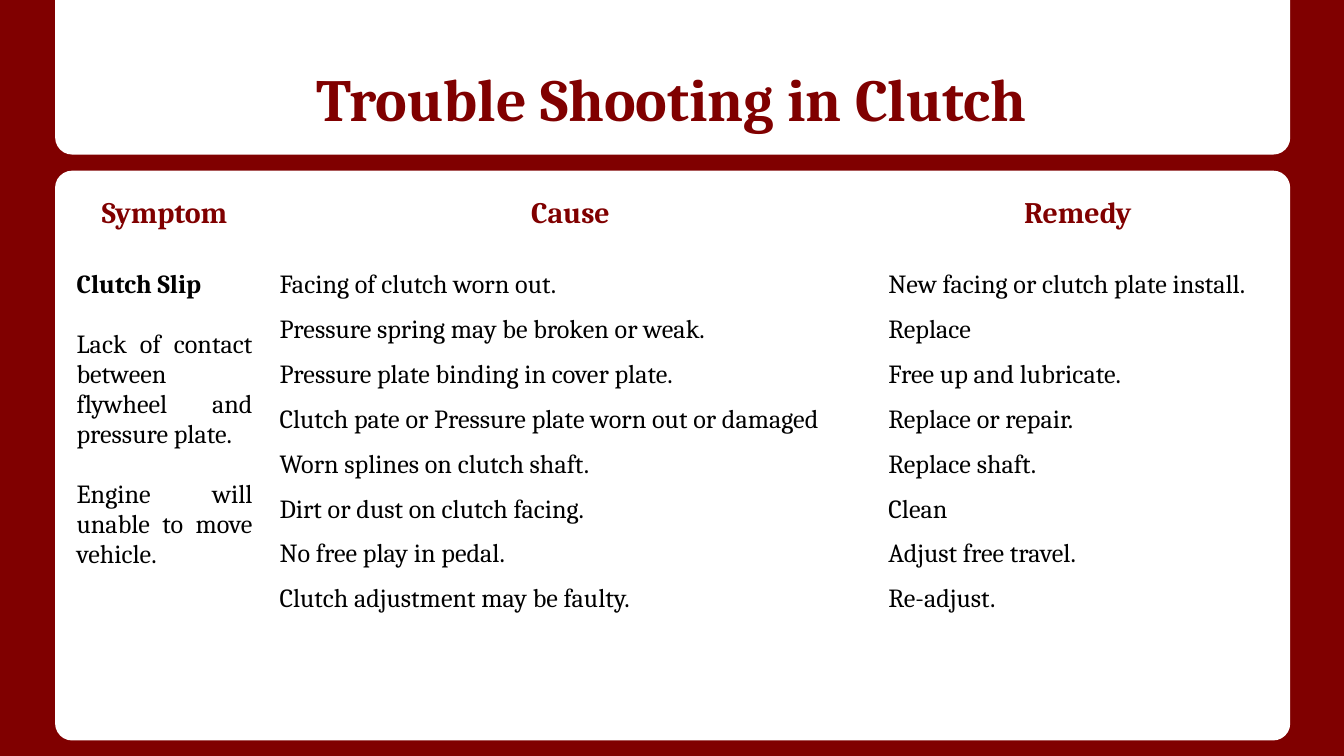
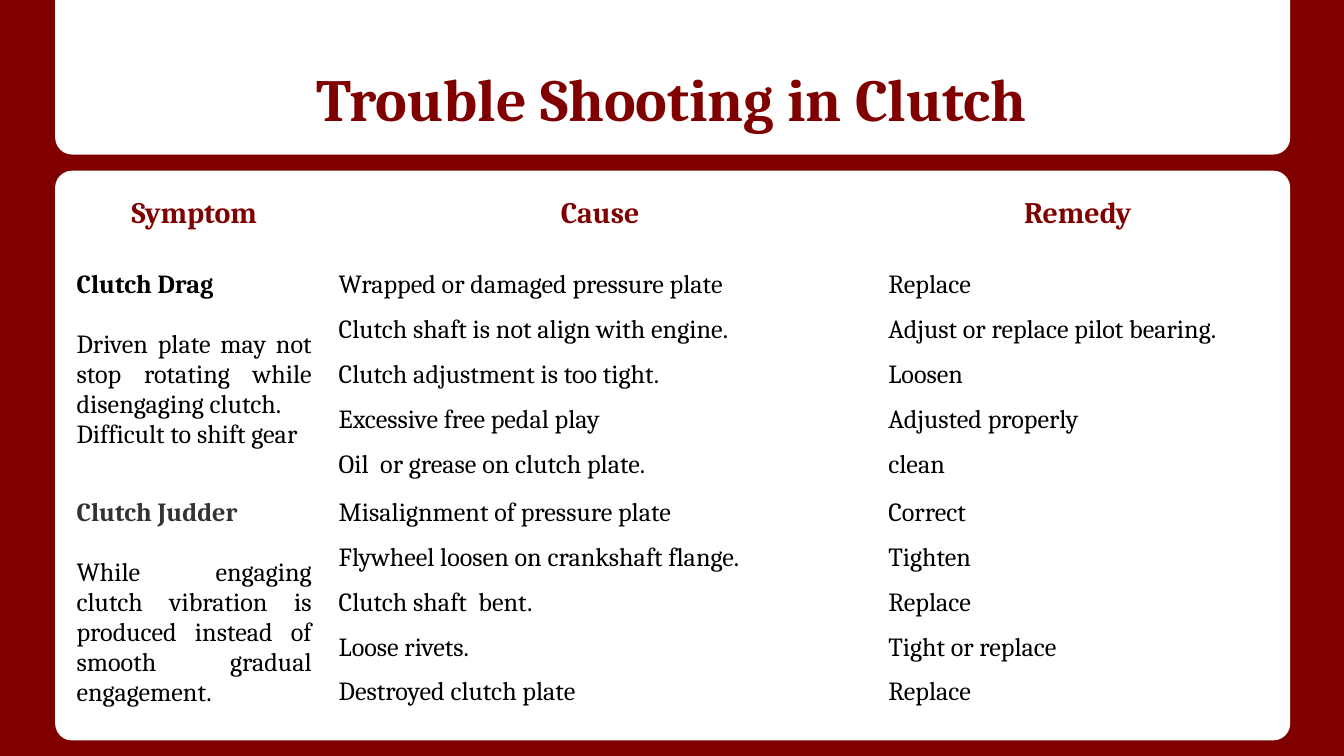
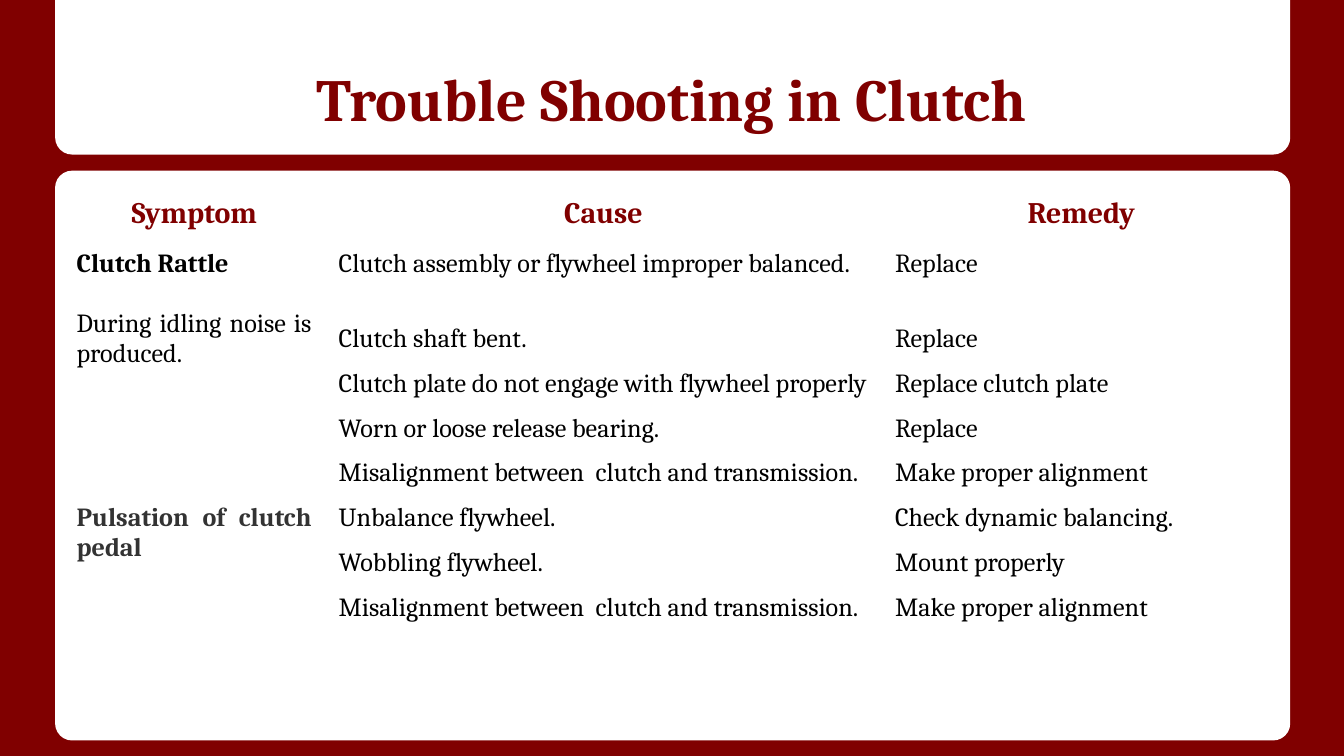
import pptx
import pptx.dml.color
import pptx.enum.shapes
import pptx.enum.text
import pptx.oxml.ns
import pptx.util

Inches, Pt = pptx.util.Inches, pptx.util.Pt
ALIGN = pptx.enum.text.PP_ALIGN
SHAPE = pptx.enum.shapes.MSO_SHAPE

MAROON, WHITE, BLACK, GREY = "800000", "FFFFFF", "000000", "333333"
TITLE = "Trouble Shooting in Clutch"
HEADINGS = ("Symptom", "Cause", "Remedy")
BLANK_LAYOUT = 6
NO_GRID_STYLE = "{2D5ABB26-0587-4C30-8999-92F81FD0307C}"
LINE_GAP = 16  # points, one line of body text

TITLE_FORMAT = {"size": Pt(32), "bold": True, "name": "Cambria"}
HEADING_FORMAT = {"size": Pt(16), "bold": True, "name": "Cambria"}
SYMPTOM_FORMAT = {"size": Pt(14), "bold": True, "name": "Cambria"}
BODY_FORMAT = {"size": Pt(14), "bold": False, "name": "Cambria"}

# Each symptom has its details as (text, points before) and its (cause, remedy) pairs.
PAGES = [
    {
        "columns": (1.51, 4.53, 3.02),
        "rows": [0.55] + [0.32] * 8,
        "symptoms": [
            {
                "name": "Clutch Slip",
                "details": [
                    ("Lack of contact between flywheel and pressure plate.", LINE_GAP),
                    ("Engine will unable to move vehicle.", LINE_GAP),
                ],
                "repairs": [
                    ("Facing of clutch worn out.", "New facing or clutch plate install."),
                    ("Pressure spring may be broken or weak.", "Replace"),
                    ("Pressure plate binding in cover plate.", "Free up and lubricate."),
                    ("Clutch pate or Pressure plate worn out or damaged", "Replace or repair."),
                    ("Worn splines on clutch shaft.", "Replace shaft."),
                    ("Dirt or dust on clutch facing.", "Clean"),
                    ("No free play in pedal.", "Adjust free travel."),
                    ("Clutch adjustment may be faulty.", "Re-adjust."),
                ],
            },
        ],
    },
    {
        "columns": (1.95, 4.09, 3.02),
        "rows": [0.55] + ([0.32] * 4 + [0.36]) * 2,
        "symptoms": [
            {
                "name": "Clutch Drag",
                "details": [
                    ("Driven plate may not stop rotating while disengaging clutch.", LINE_GAP),
                    ("Difficult to shift gear", 0),
                ],
                "repairs": [
                    ("Wrapped or damaged pressure plate", "Replace"),
                    ("Clutch shaft is not align with engine.", "Adjust or replace pilot bearing."),
                    ("Clutch adjustment is too tight.", "Loosen"),
                    ("Excessive free pedal play", "Adjusted properly"),
                    ("Oil  or grease on clutch plate.", "clean"),
                ],
            },
            {
                "name": "Clutch Judder",
                "details": [
                    ("While engaging clutch vibration is produced instead of smooth gradual "
                     "engagement.", LINE_GAP),
                ],
                "repairs": [
                    ("Misalignment of pressure plate", "Correct"),
                    ("Flywheel loosen on crankshaft flange.", "Tighten"),
                    ("Clutch shaft  bent.", "Replace"),
                    ("Loose rivets.", "Tight or replace"),
                    ("Destroyed clutch plate", "Replace"),
                ],
            },
        ],
    },
    {
        "columns": (1.95, 4.14, 2.97),
        "rows": [0.39, 0.56] + [0.33] * 7,
        "symptoms": [
            {
                "name": "Clutch Rattle",
                "details": [("During idling noise is produced.", LINE_GAP)],
                "repairs": [
                    ("Clutch assembly or flywheel improper balanced.", "Replace"),
                    ("Clutch shaft bent.", "Replace"),
                    ("Clutch plate do not engage with flywheel properly", "Replace clutch plate"),
                    ("Worn or loose release bearing.", "Replace"),
                    ("Misalignment between  clutch and transmission.", "Make proper alignment"),
                ],
            },
            {
                "name": "Pulsation of clutch pedal",
                "details": [],
                "repairs": [
                    ("Unbalance flywheel.", "Check dynamic balancing."),
                    ("Wobbling flywheel.", "Mount properly"),
                    ("Misalignment between  clutch and transmission.", "Make proper alignment"),
                ],
            },
        ],
    },
]


def rgb(color):
    return pptx.dml.color.RGBColor.from_string(color)


def write(paragraph, text, font_format, color=BLACK, align=ALIGN.JUSTIFY, before=0):
    paragraph.alignment = align
    paragraph.space_before = Pt(before)
    run = paragraph.add_run()
    run.text = text
    for attribute, value in font_format.items():
        setattr(run.font, attribute, value)
    run.font.color.rgb = rgb(color)


def add_panel(slide, preset, top, height, corner, rotation=0):
    panel = slide.shapes.add_shape(
        preset, Inches(0.41), Inches(top), Inches(9.19), Inches(height))
    panel.adjustments[0] = corner
    panel.rotation = rotation
    panel.shadow.inherit = False
    panel.fill.solid()
    panel.fill.fore_color.rgb = rgb(WHITE)
    panel.line.fill.background()


def add_title(slide):
    frame = slide.shapes.add_textbox(
        Inches(0.5), Inches(0.15), Inches(9), Inches(0.94)).text_frame
    frame_format = {
        "word_wrap": True,
        "vertical_anchor": pptx.enum.text.MSO_ANCHOR.BOTTOM,
        "margin_top": Inches(0.1),
        "margin_bottom": Inches(0.1),
    }
    for attribute, value in frame_format.items():
        setattr(frame, attribute, value)
    write(frame.paragraphs[0], TITLE, TITLE_FORMAT, MAROON, ALIGN.CENTER)


def add_troubles(slide, page):
    """Add the table; each symptom spans the rows of its repairs."""
    columns, rows = page["columns"], page["rows"]
    holder = slide.shapes.add_table(
        len(rows), len(columns), Inches(0.47), Inches(1.41),
        Inches(sum(columns)), Inches(sum(rows)))
    style_tag = pptx.oxml.ns.qn("a:tableStyleId")
    next(holder.element.iter(style_tag)).text = NO_GRID_STYLE
    troubles = holder.table
    troubles.first_row = troubles.horz_banding = False
    for column, width in zip(troubles.columns, columns):
        column.width = Inches(width)
    for row, height in zip(troubles.rows, rows):
        row.height = Inches(height)
    for cell in troubles.iter_cells():
        cell.fill.background()

    for column, heading in enumerate(HEADINGS):
        write(troubles.cell(0, column).text_frame.paragraphs[0],
              heading, HEADING_FORMAT, MAROON, ALIGN.CENTER)

    first = 1
    for symptom in page["symptoms"]:
        repairs = symptom["repairs"]
        symptom_cell = troubles.cell(first, 0)
        symptom_cell.merge(troubles.cell(first + len(repairs) - 1, 0))
        frame = symptom_cell.text_frame
        write(frame.paragraphs[0], symptom["name"], SYMPTOM_FORMAT,
              BLACK if first == 1 else GREY)
        for detail, before in symptom["details"]:
            write(frame.add_paragraph(), detail, BODY_FORMAT, before=before)
        for row, repair in enumerate(repairs, first):
            for column, text in enumerate(repair, 1):
                write(troubles.cell(row, column).text_frame.paragraphs[0], text, BODY_FORMAT)
        first += len(repairs)


def main():
    deck = pptx.Presentation()
    deck.slide_width = Inches(10)
    deck.slide_height = deck.slide_width * 9 // 16
    for page in PAGES:
        slide = deck.slides.add_slide(deck.slide_layouts[BLANK_LAYOUT])
        slide.background.fill.solid()
        slide.background.fill.fore_color.rgb = rgb(MAROON)
        add_panel(slide, SHAPE.ROUNDED_RECTANGLE, 1.27, 4.24, 0.03)
        add_panel(slide, SHAPE.ROUND_2_SAME_RECTANGLE, 0, 1.15, 0.11, rotation=180)
        add_title(slide)
        add_troubles(slide, page)
    deck.save("out.pptx")


if __name__ == "__main__":
    main()
